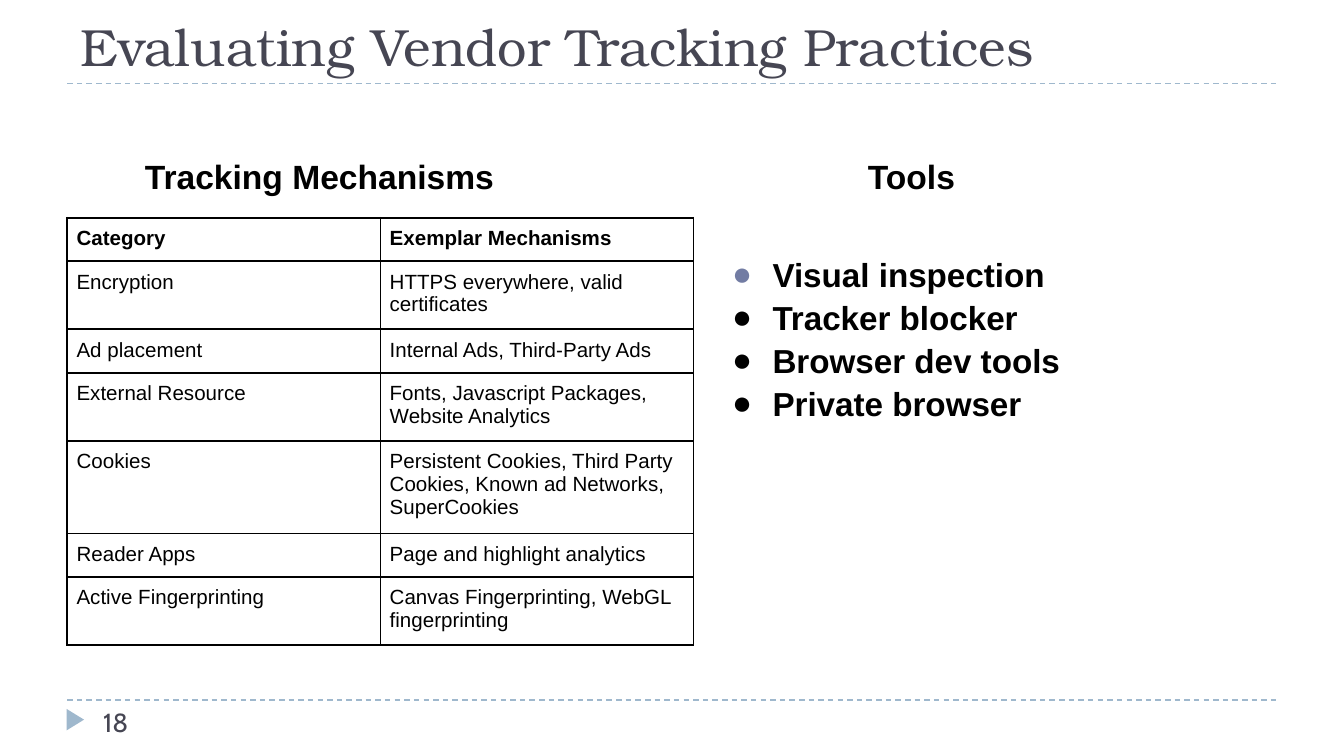
from lxml import etree
from pptx import Presentation
from pptx.dml.color import RGBColor
from pptx.enum.dml import MSO_LINE
from pptx.enum.shapes import MSO_CONNECTOR, MSO_SHAPE
from pptx.enum.text import MSO_ANCHOR
from pptx.oxml.ns import qn
from pptx.util import Inches, Pt

STRAIGHT = MSO_CONNECTOR.STRAIGHT
TRIANGLE = MSO_SHAPE.ISOSCELES_TRIANGLE
DASH = MSO_LINE.DASH
TOP, BOTTOM = MSO_ANCHOR.TOP, MSO_ANCHOR.BOTTOM

BLACK = RGBColor(0x00, 0x00, 0x00)
SLATE = RGBColor(0x46, 0x46, 0x53)
PALE_BLUE = RGBColor(0x9F, 0xB8, 0xCD)
BULLET_BLUE = RGBColor(0x72, 0x7C, 0xA3)

MECHANISMS = [
    ("Category", "Exemplar Mechanisms"),
    ("Encryption", "HTTPS everywhere, valid certificates"),
    ("Ad placement", "Internal Ads, Third-Party Ads"),
    ("External Resource", "Fonts, Javascript Packages, Website Analytics"),
    ("Cookies", "Persistent Cookies, Third Party Cookies, "
                "Known ad Networks, SuperCookies"),
    ("Reader Apps", "Page and highlight analytics"),
    ("Active Fingerprinting", "Canvas Fingerprinting, WebGL fingerprinting"),
]
TOOLS = ["Visual inspection", "Tracker blocker", "Browser dev tools", "Private browser"]


def add_run(paragraph, text, size, color=BLACK, font="Arial", bold=False):
    run = paragraph.add_run()
    run.text = text
    run.font.name = font
    run.font.size = Pt(size)
    run.font.bold = bold
    run.font.color.rgb = color


def add_text_frame(slide, left, top, width, height, anchor=TOP, inset=0.05):
    """Add a wrapping text box and return its text frame."""
    box = slide.shapes.add_textbox(Inches(left), Inches(top), Inches(width), Inches(height))
    frame = box.text_frame
    frame.word_wrap = True
    frame.vertical_anchor = anchor
    frame.margin_left = frame.margin_right = Inches(0.1)
    frame.margin_top = frame.margin_bottom = Inches(inset)
    return frame


def add_dashed_rule(slide, y):
    rule = slide.shapes.add_connector(STRAIGHT, Inches(0.5), Inches(y), Inches(9.5), Inches(y))
    rule.line.color.rgb = PALE_BLUE
    rule.line.width = Pt(0.75)
    rule.line.dash_style = DASH
    etree.SubElement(rule._element.spPr, qn("a:effectLst"))


def add_page_marker(slide):
    marker = slide.shapes.add_shape(
        TRIANGLE, Inches(0.48), Inches(5.29), Inches(0.16), Inches(0.13))
    marker.rotation = 90
    marker.shadow.inherit = False
    marker.fill.solid()
    marker.fill.fore_color.rgb = PALE_BLUE
    marker.line.fill.background()


def add_heading(slide, left, text):
    frame = add_text_frame(slide, left, 1.06, 3.22, 0.4, inset=0.1)
    add_run(frame.paragraphs[0], text, 18, bold=True)


def set_borders(cell):
    properties = cell._tc.get_or_add_tcPr()
    for side in ("a:lnL", "a:lnR", "a:lnT", "a:lnB"):
        line = etree.SubElement(properties, qn(side), w=str(Pt(1)))
        fill = etree.SubElement(line, qn("a:solidFill"))
        etree.SubElement(fill, qn("a:srgbClr"), val=str(BLACK))


def fill_cell(cell, text, bold):
    cell.margin_left = cell.margin_right = Inches(0.07)
    cell.margin_top = cell.margin_bottom = Inches(0.07)
    set_borders(cell)
    cell.fill.background()
    add_run(cell.text_frame.paragraphs[0], text, 11, bold=bold)


def add_mechanism_table(slide):
    """Add the table with minimal row heights, so that each row grows to its text."""
    frame = slide.shapes.add_table(
        len(MECHANISMS), 2, Inches(0.5), Inches(1.62), Inches(3.28), Inches(3.28))
    table = frame.table
    table.first_row = table.horz_banding = False
    for column in table.columns:
        column.width = Inches(2.33)
    for index, texts in enumerate(MECHANISMS):
        table.rows[index].height = Inches(0.01)
        for column, text in enumerate(texts):
            fill_cell(table.cell(index, column), text, bold=index == 0)
    frame.width = frame.height = Inches(3.28)


def set_bullet(paragraph, color, hanging):
    properties = paragraph._p.get_or_add_pPr()
    properties.set("marL", str(Inches(0.3)))
    properties.set("indent", str(-Inches(hanging)))
    bullet_color = etree.SubElement(properties, qn("a:buClr"))
    etree.SubElement(bullet_color, qn("a:srgbClr"), val=str(color))
    etree.SubElement(properties, qn("a:buFont"), typeface="Arial")
    etree.SubElement(properties, qn("a:buChar"), char="●")


def add_tool_list(slide):
    frame = add_text_frame(slide, 5.35, 1.9, 4.23, 3.31)
    for index, tool in enumerate(TOOLS):
        paragraph = frame.add_paragraph() if index else frame.paragraphs[0]
        paragraph.line_spacing = 0.8
        paragraph.space_before = Pt(6)
        if index:
            set_bullet(paragraph, BLACK, 0.32)
        else:
            set_bullet(paragraph, BULLET_BLUE, 0.3)
        add_run(paragraph, tool, 17.8, bold=True)


def main():
    presentation = Presentation()
    presentation.slide_width = Inches(10)
    presentation.slide_height = Inches(10) * 9 // 16
    slide = presentation.slides.add_slide(presentation.slide_layouts[6])

    for y in (5.21, 0.62):
        add_dashed_rule(slide, y)
    add_page_marker(slide)
    title = add_text_frame(slide, 0.5, 0.12, 7.55, 0.5, anchor=BOTTOM)
    add_run(title.paragraphs[0], "Evaluating Vendor Tracking Practices",
            28, SLATE, "TeX Gyre Bonum")
    page_number = add_text_frame(slide, 0.67, 5.21, 2.17, 0.3)
    add_run(page_number.paragraphs[0], "18", 14, SLATE, "Cabin")

    add_mechanism_table(slide)
    add_heading(slide, 0.98, "Tracking Mechanisms")
    add_heading(slide, 6.36, "Tools")
    add_tool_list(slide)
    presentation.save("out.pptx")


if __name__ == "__main__":
    main()
